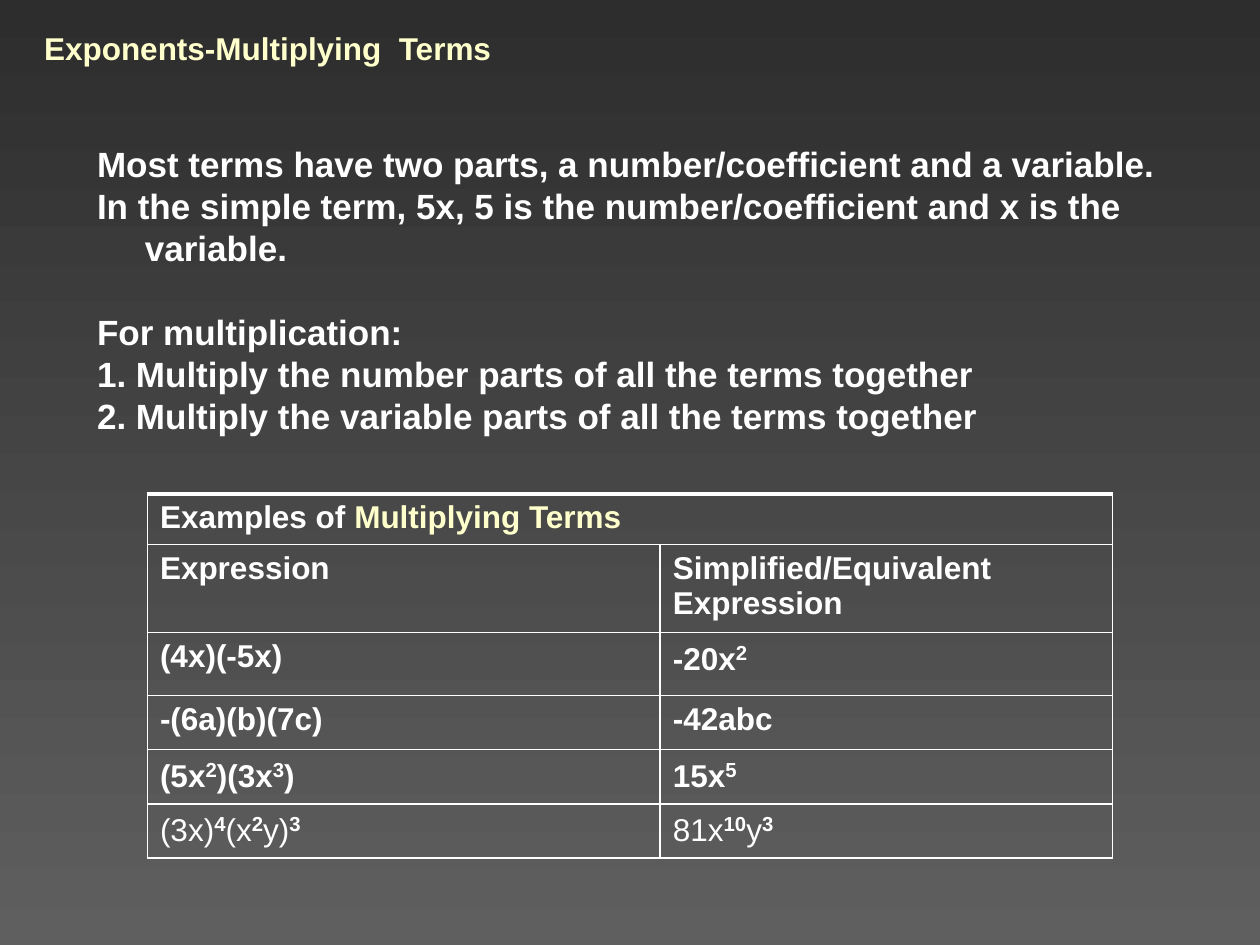
"""Build a slide on multiplying terms with exponents."""
from pptx import Presentation
from pptx.dml.color import RGBColor
from pptx.enum.text import MSO_ANCHOR, MSO_AUTO_SIZE, PP_ALIGN
from pptx.oxml import parse_xml
from pptx.oxml.ns import nsdecls
from pptx.util import Inches, Pt

WHITE = RGBColor(0xFF, 0xFF, 0xFF)
CREAM = RGBColor(0xFF, 0xFF, 0xCC)
DARK = RGBColor(0x2D, 0x2D, 0x2D)
GRAY = RGBColor(0x5F, 0x5F, 0x5F)

RULES = [
    "Most terms have two parts, a number/coefficient and a variable.",
    "In the simple term, 5x, 5 is the number/coefficient and x is the variable.",
    "For multiplication:",
    "1. Multiply the number parts of all the terms together",
    "2. Multiply the variable parts of all the terms together",
]
EXAMPLES = [
    ("Expression", "Simplified/Equivalent Expression"),
    ("(4x)(-5x)", "-20x^2"),
    ("-(6a)(b)(7c)", "-42abc"),
    ("(5x^2^)(3x^3^)", "15x^5"),
    ("(3x)^4^(x^2^y)^3", "81x^10^y^3"),
]


class SlideBuilder:
    font = "Arial"

    def __init__(self, prs):
        self.s = prs.slides.add_slide(prs.slide_layouts[1])

    def background(self, top, bottom):
        fill = self.s.background.fill
        fill.gradient()
        fill.gradient_angle = 270
        for stop, color in zip(fill.gradient_stops, (top, bottom)):
            stop.color.rgb = color

    def style(self, r, size=18, color=WHITE, bold=True):
        r.font.name = self.font
        r.font.size = Pt(size)
        r.font.bold = bold
        r.font.color.rgb = color

    def place(self, sp, left, top, width, height):
        sp.left, sp.top = Inches(left), Inches(top)
        sp.width, sp.height = Inches(width), Inches(height)

    def title(self, text, *box):
        sp = self.s.shapes.title
        self.place(sp, *box)
        tf = sp.text_frame
        tf.text = text
        tf.auto_size = MSO_AUTO_SIZE.NONE
        tf.vertical_anchor = MSO_ANCHOR.MIDDLE
        p = tf.paragraphs[0]
        p.alignment = PP_ALIGN.LEFT
        self.style(p.runs[0], color=CREAM)

    def body(self, lines, gap_before, *box):
        sp = self.s.placeholders[1]
        self.place(sp, *box)
        tf = sp.text_frame
        tf.text = "\n".join(lines)
        tf.auto_size = MSO_AUTO_SIZE.NONE
        for i, p in enumerate(tf.paragraphs):
            p.line_spacing = Pt(24)
            p.space_before = Pt(24 if i == gap_before else 0)
            pPr = p._p.get_or_add_pPr()
            pPr.set("marL", str(Inches(0.38)))
            pPr.set("indent", str(-Inches(0.38)))
            pPr.append(parse_xml(f"<a:buNone {nsdecls('a')}/>"))
            self.style(p.runs[0], 20)

    def borders(self, cell, top=1):
        tcPr = cell._tc.get_or_add_tcPr()
        for i, (side, width) in enumerate(zip("LRTB", (1, 1, top, 1))):
            tcPr.insert(i, parse_xml(
                f'<a:ln{side} {nsdecls("a")} w="{Pt(width)}"><a:solidFill>'
                f'<a:srgbClr val="{WHITE}"/></a:solidFill></a:ln{side}>'))

    def expression(self, p, text, bold):
        for i, part in enumerate(text.split("^")):
            if part:
                r = p.add_run()
                r.text = part
                raised = i % 2 == 1
                self.style(r, 20 if raised else 18, bold=bold or raised)
                if raised:
                    r._r.get_or_add_rPr().set("baseline", "30000")

    def table(self, heading, rows, left, top, widths, heights):
        frame = self.s.shapes.add_table(
            len(heights), len(widths), Inches(left), Inches(top),
            Inches(sum(widths)), Inches(sum(heights)))
        tbl = frame.table
        tbl.first_row = tbl.horz_banding = False
        for col, width in zip(tbl.columns, widths):
            col.width = Inches(width)
        for i, (row, height) in enumerate(zip(tbl.rows, heights)):
            row.height = Inches(height)
            for cell in row.cells:
                cell.fill.background()
                self.borders(cell, 2.25 if i == 0 else 1)
        head = tbl.cell(0, 0)
        head.merge(tbl.cell(0, len(widths) - 1))
        for text, color in heading:
            r = head.text_frame.paragraphs[0].add_run()
            r.text = text
            self.style(r, color=color)
        for i, texts in enumerate(rows, 1):
            for j, text in enumerate(texts):
                p = tbl.cell(i, j).text_frame.paragraphs[0]
                self.expression(p, text, bold=i < len(rows))


def main():
    prs = Presentation()
    prs.slide_width, prs.slide_height = Inches(10), Inches(7.5)
    b = SlideBuilder(prs)
    b.background(DARK, GRAY)
    b.title("Exponents-Multiplying  Terms", 0.25, 0.17, 5, 0.42)
    b.body(RULES, 2, 0.67, 1.08, 8.75, 2.43)
    b.table([("Examples of ", WHITE), ("Multiplying Terms", CREAM)], EXAMPLES,
            1.17, 3.92, (4.07, 3.59), (0.4, 0.7, 0.5, 0.43, 0.43, 0.43))
    prs.save("out.pptx")


if __name__ == "__main__":
    main()
